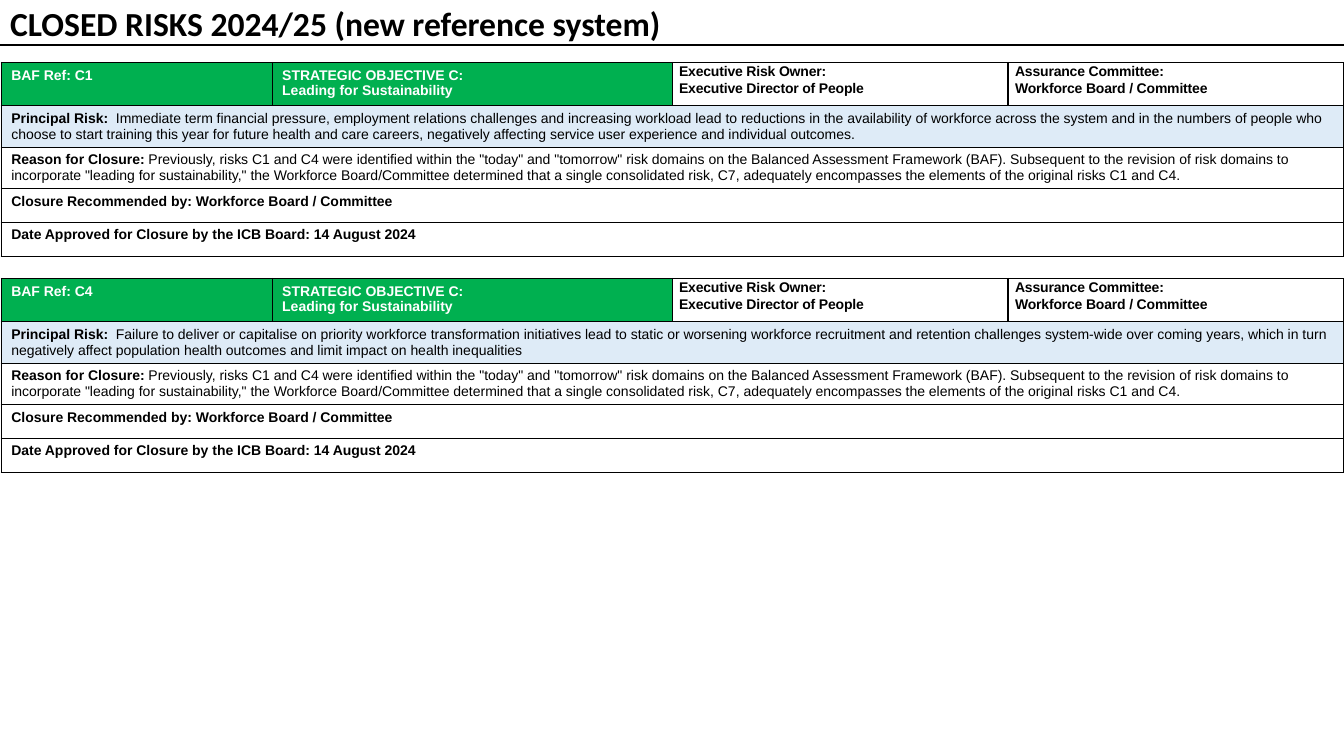
import pptx
import pptx.dml.color
import pptx.enum.shapes
import pptx.enum.text
import pptx.oxml
import pptx.oxml.ns
import pptx.util

Pt = pptx.util.Pt
NS = pptx.oxml.ns.nsdecls("a")
BLACK, WHITE, GREEN, PALE_BLUE = "000000", "FFFFFF", "00B050", "DEEBF7"


def rgb(value):
    return pptx.dml.color.RGBColor.from_string(value)


def add_run(p, text, color=BLACK, bold=True, size=10, name="Arial"):
    r = p.add_run()
    r.text = text
    for key, value in {"size": Pt(size), "bold": bold, "name": name}.items():
        setattr(r.font, key, value)
    r.font.color.rgb = rgb(color)
    return r


prs = pptx.Presentation()
prs.slide_width, prs.slide_height = Pt(960), Pt(540)
s = prs.slides.add_slide(prs.slide_layouts[5])

# Title and rule
title = s.shapes.title
for key, value in {"left": 0, "top": 4.3, "width": 960, "height": 23.8}.items():
    setattr(title, key, Pt(value))
tf = title.text_frame
tf.auto_size = pptx.enum.text.MSO_AUTO_SIZE.NONE
tf.vertical_anchor = pptx.enum.text.MSO_ANCHOR.MIDDLE
p = tf.paragraphs[0]
p.alignment = pptx.enum.text.PP_ALIGN.LEFT
add_run(p, "CLOSED RISKS 2024/25 (new reference system)", size=24, name="Calibri")

rule = s.shapes.add_connector(
    pptx.enum.shapes.MSO_CONNECTOR.STRAIGHT, Pt(0), Pt(32.2), Pt(960), Pt(32.2))
rule.line.color.rgb = rgb(BLACK)
rule.line.width = Pt(1.5)
rule._element.spPr.append(pptx.oxml.parse_xml(f"<a:effectLst {NS}/>"))

# Closed risks: table top, reference, principal risk
risks = [
    (44.6, "C1",
     "Immediate term financial pressure, employment relations challenges and increasing "
     "workload lead to reductions in the availability of workforce across the system and in "
     "the numbers of people who choose to start training this year for future health and care "
     "careers, negatively affecting service user experience and individual outcomes."),
    (198.9, "C4",
     "Failure to deliver or capitalise on priority workforce transformation initiatives lead "
     "to static or worsening workforce recruitment and retention challenges system-wide over "
     "coming years, which in turn negatively affect population health outcomes and limit "
     "impact on health inequalities"),
]
reason = (
    'Previously, risks C1 and C4 were identified within the "today" and "tomorrow" risk domains '
    "on the Balanced Assessment Framework (BAF). Subsequent to the revision of risk domains to "
    'incorporate "leading for sustainability," the Workforce Board/Committee determined that a '
    "single consolidated risk, C7, adequately encompasses the elements of the original risks "
    "C1 and C4.")
owners = [
    (2, "Executive Risk Owner:", "Executive Director of People", 0.6, 1.05),
    (3, "Assurance Committee:", "Workforce Board / Committee", 0.8, 1.02),
]
col_widths = [193.5, 285.7, 240, 240]
row_heights = [31, 21, 24, 24, 24.3]

for top, ref, principal_risk in risks:
    frame = s.shapes.add_table(5, 4, Pt(0.9), Pt(top), Pt(sum(col_widths)), Pt(sum(row_heights)))
    table = frame.table
    table.first_row = table.horz_banding = False
    for col, width in zip(table.columns, col_widths):
        col.width = Pt(width)
    for row, height in zip(table.rows, row_heights):
        row.height = Pt(height)

    for cell in table.iter_cells():
        tcPr = cell._tc.get_or_add_tcPr()
        for side in ("lnL", "lnR", "lnT", "lnB"):
            tcPr.append(pptx.oxml.parse_xml(
                f'<a:{side} {NS} w="12700"><a:solidFill><a:srgbClr val="{BLACK}"/>'
                f'</a:solidFill></a:{side}>'))
        cell.fill.solid()
        cell.fill.fore_color.rgb = rgb(WHITE)

    # Header row
    for c, lines in enumerate([[f"BAF Ref: {ref}"],
                               ["STRATEGIC OBJECTIVE C: ", "Leading for Sustainability"]]):
        cell = table.cell(0, c)
        cell.fill.fore_color.rgb = rgb(GREEN)
        p = cell.text_frame.paragraphs[0]
        for i, line in enumerate(lines):
            if i:
                p.add_line_break()
            add_run(p, line, WHITE)

    for c, label, owner, top_margin, spacing in owners:
        cell = table.cell(0, c)
        for key in ("margin_left", "margin_right", "margin_bottom"):
            setattr(cell, key, Pt(0))
        cell.margin_top = Pt(top_margin)
        tf = cell.text_frame
        first, second = tf.paragraphs[0], tf.add_paragraph()
        second.space_before = Pt(0.6)
        for p, text, line_spacing in ((first, label, spacing), (second, owner, 1.05)):
            p.line_spacing = line_spacing
            p._p.get_or_add_pPr().set("marL", str(Pt(5)))
            add_run(p, text)._r.get_or_add_rPr().set("spc", "-10")

    # Full-width rows
    details = [
        ("Principal Risk:  ", principal_risk, PALE_BLUE),
        ("Reason for Closure: ", reason, WHITE),
        ("Closure Recommended by: Workforce Board / Committee", "", WHITE),
        ("Date Approved for Closure by the ICB Board: 14 August 2024", "", WHITE),
    ]
    for n, (label, text, fill) in enumerate(details, 1):
        cell = table.cell(n, 0)
        cell.merge(table.cell(n, 3))
        cell.fill.fore_color.rgb = rgb(fill)
        p = cell.text_frame.paragraphs[0]
        add_run(p, label)
        if text:
            add_run(p, text, bold=False)

prs.save("out.pptx")
